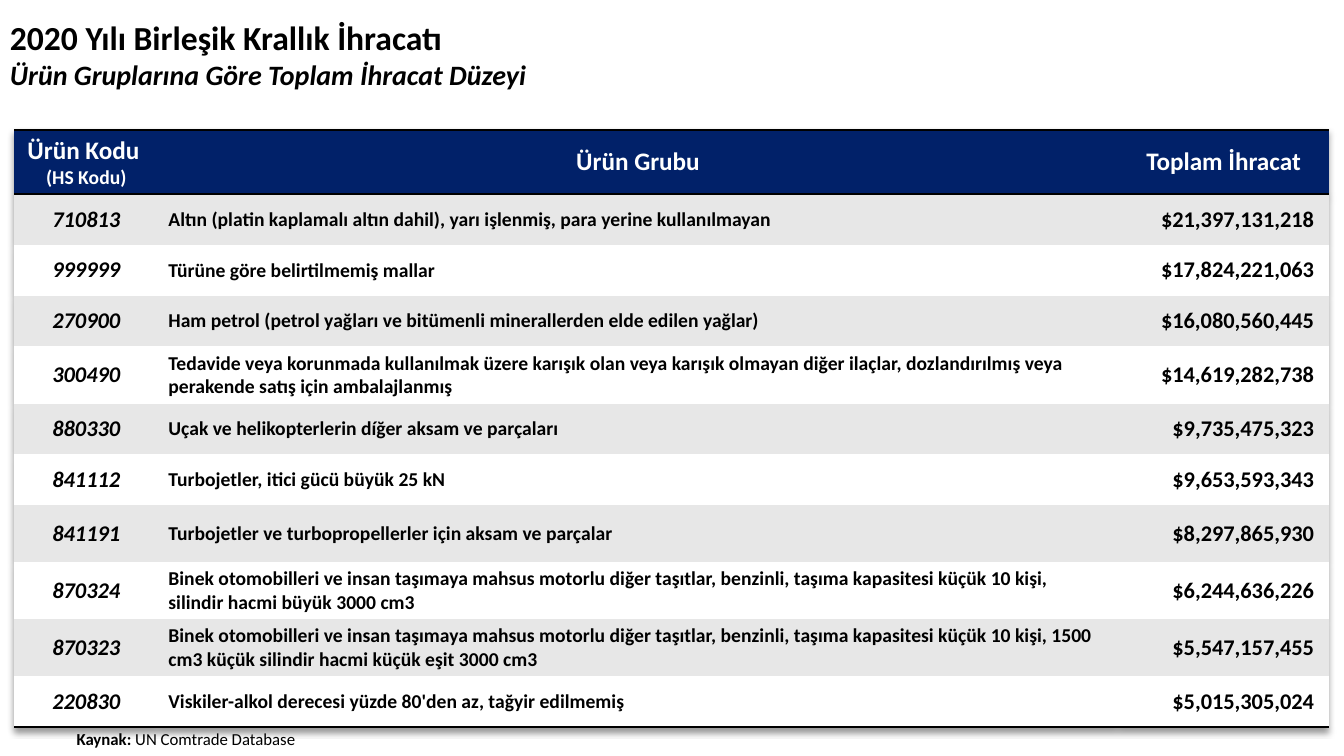
from lxml import etree
from pptx import Presentation, util as u
from pptx.dml.color import RGBColor
from pptx.enum import text
from pptx.oxml import ns

# Content
TITLE = ["2020 Yılı Birleşik Krallık İhracatı",
         "Ürün Gruplarına Göre Toplam İhracat Düzeyi"]
SOURCE = ["Kaynak:", " UN Comtrade Database"]
HEADS = [["Ürün Kodu ", "(HS Kodu)"], ["Ürün Grubu"], ["Toplam İhracat"]]
GOODS = [
    ("710813", "Altın (platin kaplamalı altın dahil), yarı işlenmiş, para yerine kullanılmayan", 21397131218),
    ("999999", "Türüne göre belirtilmemiş mallar", 17824221063),
    ("270900", "Ham petrol (petrol yağları ve bitümenli minerallerden elde edilen yağlar)", 16080560445),
    ("300490", "Tedavide veya korunmada kullanılmak üzere karışık olan veya karışık olmayan diğer ilaçlar, "
               "dozlandırılmış veya perakende satış için ambalajlanmış", 14619282738),
    ("880330", "Uçak ve helikopterlerin díğer aksam ve parçaları", 9735475323),
    ("841112", "Turbojetler, itici gücü büyük 25 kN", 9653593343),
    ("841191", "Turbojetler ve turbopropellerler için aksam ve parçalar", 8297865930),
    ("870324", "Binek otomobilleri ve insan taşımaya mahsus motorlu diğer taşıtlar, benzinli, "
               "taşıma kapasitesi küçük 10 kişi, silindir hacmi büyük 3000 cm3", 6244636226),
    ("870323", "Binek otomobilleri ve insan taşımaya mahsus motorlu diğer taşıtlar, benzinli, "
               "taşıma kapasitesi küçük 10 kişi, 1500 cm3 küçük silindir hacmi küçük eşit 3000 cm3", 5547157455),
    ("220830", "Viskiler-alkol derecesi yüzde 80'den az, tağyir edilmemiş", 5015305024),
]

# Format
HUES = {"ink": "000000", "head": "012169", "pale": "FFFFFF", "band": "E7E7E7"}
WIDTHS = [3.63, 24.18, 5.33]
HEAD_H, ROW_H, TALL_H = 1.61, 1.28, 1.43
TALL = {"300490", "841191", "870324", "870323"}
LEFT, MID, RIGHT = text.PP_ALIGN.LEFT, text.PP_ALIGN.CENTER, text.PP_ALIGN.RIGHT
LOOKS = [({"size": 16, "italic": True}, MID), ({"size": 14}, LEFT), ({"size": 16}, RIGHT)]


def add_run(para, words, hue="ink", **look):
    run = para.add_run()
    run.text = words
    run.font.color.rgb = RGBColor.from_string(HUES[hue])
    for key, val in {"name": "Calibri", "bold": True, **look}.items():
        setattr(run.font, key, u.Pt(val) if key == "size" else val)


def add_box(x, y, w, h, wrap):
    frame = slide.shapes.add_textbox(*map(u.Cm, (x, y, w, h))).text_frame
    frame.word_wrap = wrap
    return frame


def fill_cell(cell, lines, hue, ink, align):
    cell.fill.solid()
    cell.fill.fore_color.rgb = RGBColor.from_string(HUES[hue])
    cell.vertical_anchor = text.MSO_ANCHOR.MIDDLE
    for i, (words, look) in enumerate(lines):
        para = cell.text_frame.paragraphs[0] if i == 0 else cell.text_frame.add_paragraph()
        para.alignment = align
        add_run(para, words, ink, **look)


def add_edge(cell, side):
    line = etree.Element(ns.qn("a:ln" + side), w=str(u.Pt(2)))
    fill = etree.SubElement(line, ns.qn("a:solidFill"))
    etree.SubElement(fill, ns.qn("a:srgbClr"), val=HUES["ink"])
    cell._tc.get_or_add_tcPr().insert(0, line)


deck = Presentation()
deck.slide_width, deck.slide_height = u.Cm(33.87), u.Cm(19.05)
slide = deck.slides.add_slide(deck.slide_layouts[6])

# Title
frame = add_box(0, 0.3, 33.87, 2.13, True)
add_run(frame.paragraphs[0], TITLE[0], size=24)
add_run(frame.add_paragraph(), TITLE[1], size=20, italic=True)

# Table grid
heights = [HEAD_H] + [TALL_H if code in TALL else ROW_H for code, *_ in GOODS]
shape = slide.shapes.add_table(len(heights), len(WIDTHS), u.Cm(0.36), u.Cm(3.28),
                               u.Cm(sum(WIDTHS)), u.Cm(sum(heights)))
table = shape.table
for col, width in zip(table.columns, WIDTHS):
    col.width = u.Cm(width)
for row, height in zip(table.rows, heights):
    row.height = u.Cm(height)

# Table style: none, with a soft shadow
props = table._tbl.tblPr
props.find(ns.qn("a:tableStyleId")).text = "{2D5ABB26-0587-4C30-8999-92F81FD0307C}"
glow = etree.Element(ns.qn("a:effectLst"))
props.insert(0, glow)
shade = etree.SubElement(glow, ns.qn("a:outerShdw"), blurRad="50800", dist="38100",
                         dir="5400000", algn="t", rotWithShape="0")
tint = etree.SubElement(shade, ns.qn("a:srgbClr"), val=HUES["ink"])
etree.SubElement(tint, ns.qn("a:alpha"), val="40000")

# Header row
for c, lines in enumerate(HEADS):
    sized = [(words, {"size": size}) for words, size in zip(lines, (18, 14))]
    fill_cell(table.cell(0, c), sized, "head", "pale", MID)
    for side in "BT":
        add_edge(table.cell(0, c), side)

# Product rows
for r, (code, group, total) in enumerate(GOODS, 1):
    for c, words in enumerate((code, group, f" ${total:,} ")):
        look, align = LOOKS[c]
        fill_cell(table.cell(r, c), [(words, look)], "band" if r % 2 else "pale", "ink", align)
        if r == len(GOODS):
            add_edge(table.cell(r, c), "B")

# Source line
para = add_box(1.68, 18.24, 6.1, 0.76, False).paragraphs[0]
for words, bold in zip(SOURCE, (True, False)):
    add_run(para, words, size=12, bold=bold)

deck.save("out.pptx")
